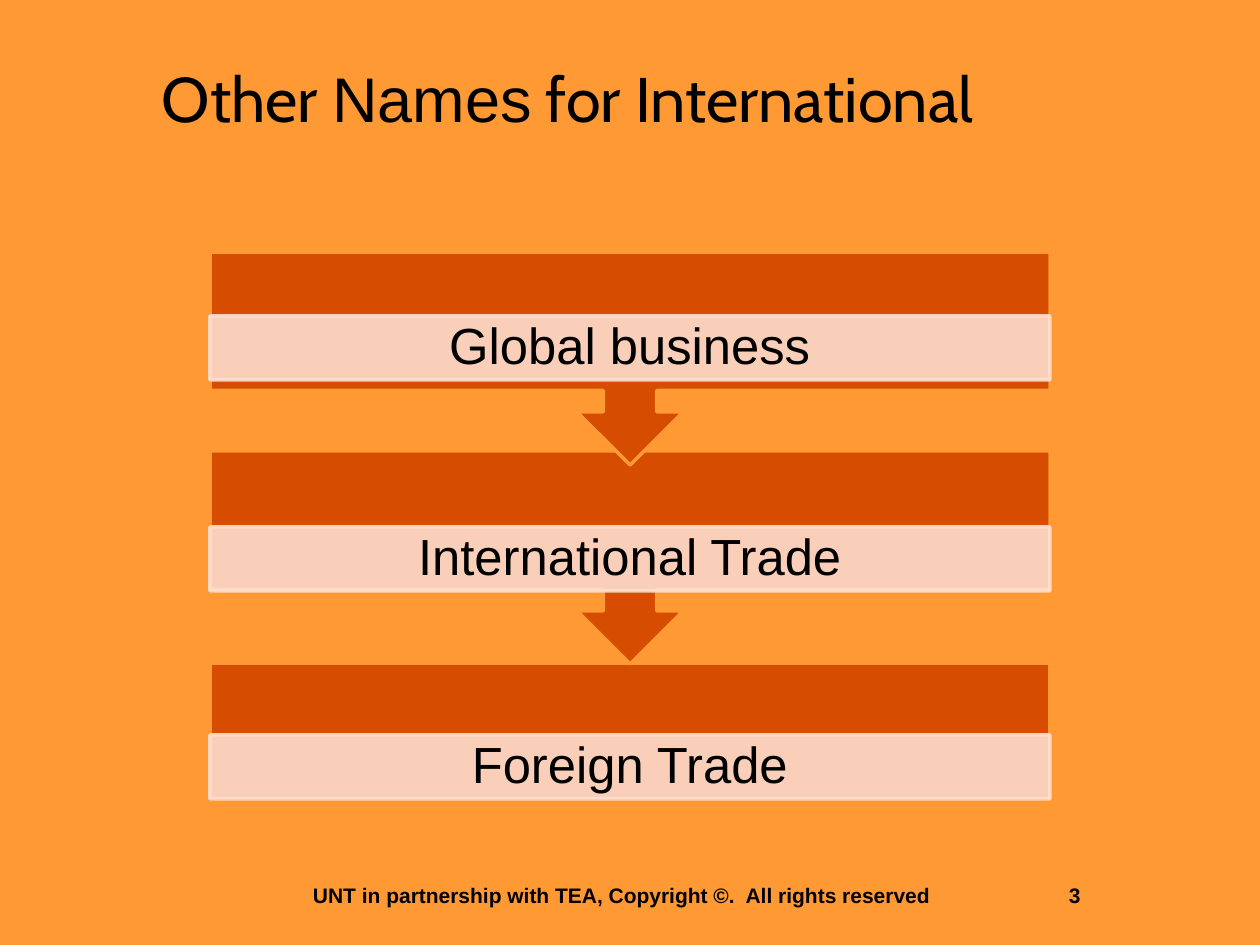
from pptx import Presentation
from pptx.dml.color import RGBColor
from pptx.enum.shapes import MSO_SHAPE
from pptx.enum.text import MSO_ANCHOR, PP_ALIGN
from pptx.oxml.ns import qn
from pptx.util import Emu, Pt
from lxml import etree

RECT, CALLOUT = MSO_SHAPE.RECTANGLE, MSO_SHAPE.UP_ARROW_CALLOUT
TOP, MIDDLE = MSO_ANCHOR.TOP, MSO_ANCHOR.MIDDLE
CENTER, LEFT = PP_ALIGN.CENTER, PP_ALIGN.LEFT
SCALE = 914400 / 126
ORANGE, RUST, PEACH, BLACK = "FF9933", "D64C00", "FFDECE", "000000"


def px(length):
    return Emu(round(length * SCALE))


def color(value):
    return RGBColor.from_string(value)


deck = Presentation()
deck.slide_width, deck.slide_height = px(1260), px(945)
slide = deck.slides.add_slide(deck.slide_layouts[5])
slide.background.fill.solid()
slide.background.fill.fore_color.rgb = color(ORANGE)

# Title with mixed fonts
title = slide.shapes.title
title_format = {"left": px(116), "top": px(53), "width": px(903), "height": px(89)}
for name, value in title_format.items():
    setattr(title, name, value)
title.text_frame.vertical_anchor = TOP
para = title.text_frame.paragraphs[0]
para.alignment = CENTER
for text, typeface in (("Other ", "Cabin"), ("Names", "Arial"),
                       (" for International", "Cabin")):
    span = para.add_run()
    span.text = text
    span.font.name, span.font.size = typeface, Pt(36)
    span.font.color.rgb = color(BLACK)

# Process steps, drawn from the bottom so each arrow overlaps the next block
steps = [
    ("Foreign Trade", RECT, 663, 139, 735),
    ("International Trade", CALLOUT, 451, 213, 527),
    ("Global business", CALLOUT, 252, 213, 316),
]
for label, kind, block_top, block_height, band_top in steps:
    block = slide.shapes.add_shape(kind, px(210), px(block_top), px(840), px(block_height))
    band = slide.shapes.add_shape(RECT, px(210), px(band_top), px(840), px(64))
    if kind == CALLOUT:
        block.rotation = 180
    for shape, fill, line in ((block, RUST, ORANGE), (band, PEACH, PEACH)):
        shape.shadow.inherit = False
        shape.fill.solid()
        shape.fill.fore_color.rgb = color(fill)
        shape.line.color.rgb = color(line)
        shape.line.width = Pt(2)

    # Slightly transparent band
    for tint in band._element.spPr.iter(qn("a:srgbClr")):
        etree.SubElement(tint, qn("a:alpha"), val="90000")

    frame = band.text_frame
    frame_format = {"margin_left": px(29), "margin_right": px(29), "margin_top": px(5),
                    "margin_bottom": px(5), "vertical_anchor": MIDDLE, "word_wrap": True}
    for name, value in frame_format.items():
        setattr(frame, name, value)
    para = frame.paragraphs[0]
    para.text = label
    para.alignment, para.line_spacing = CENTER, 0.9
    para.font.name, para.font.size = "Arial", Pt(29)
    para.font.color.rgb = color(BLACK)

# Copyright line, with the slide number at a tab stop
footer = slide.shapes.add_textbox(px(252), px(876), px(892), px(38))
footer.text_frame.word_wrap = True
footer.text_frame.margin_left = px(61)
para = footer.text_frame.paragraphs[0]
para.text = "UNT in partnership with TEA, Copyright ©.  All rights reserved\t3"
para.alignment = LEFT
tabs = etree.SubElement(para._p.get_or_add_pPr(), qn("a:tabLst"))
etree.SubElement(tabs, qn("a:tab"), pos=str(px(756)), algn="l")
for name, value in {"name": "Arial", "size": Pt(12), "bold": True}.items():
    setattr(para.font, name, value)
para.font.color.rgb = color(BLACK)

deck.save("out.pptx")
